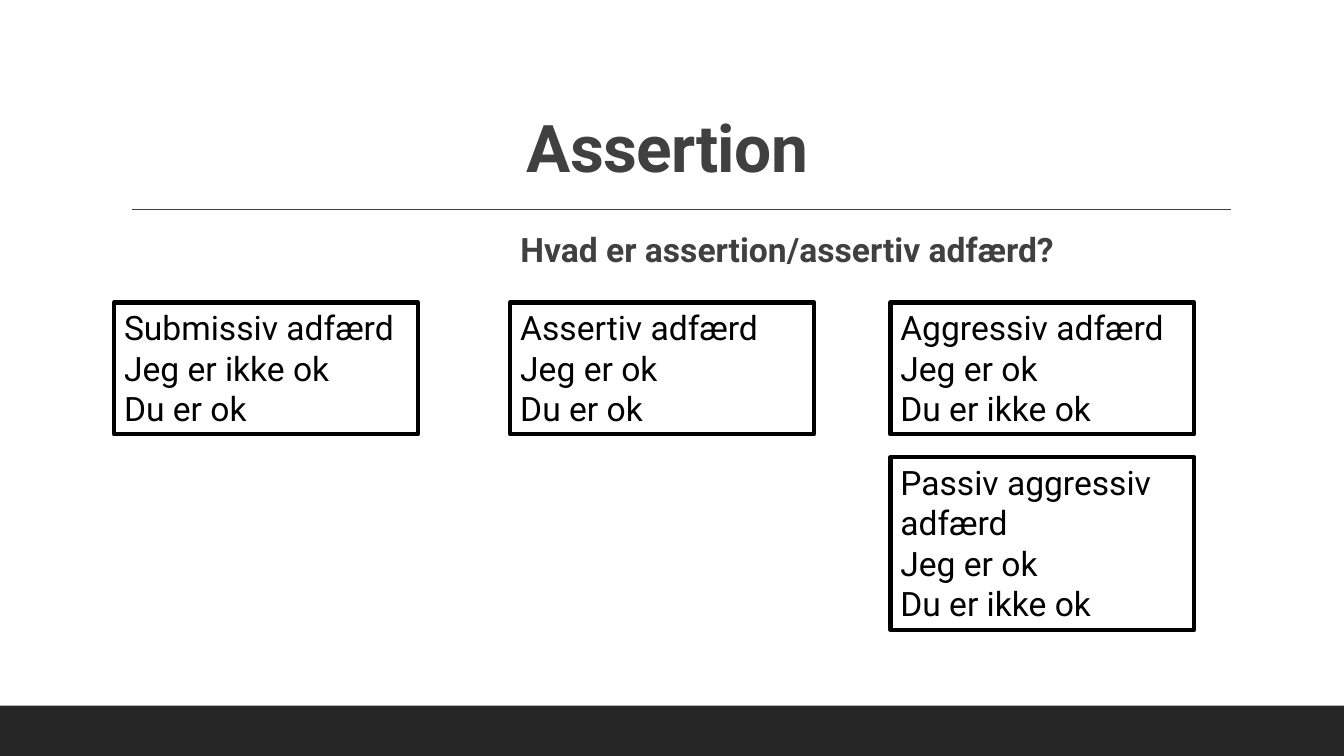
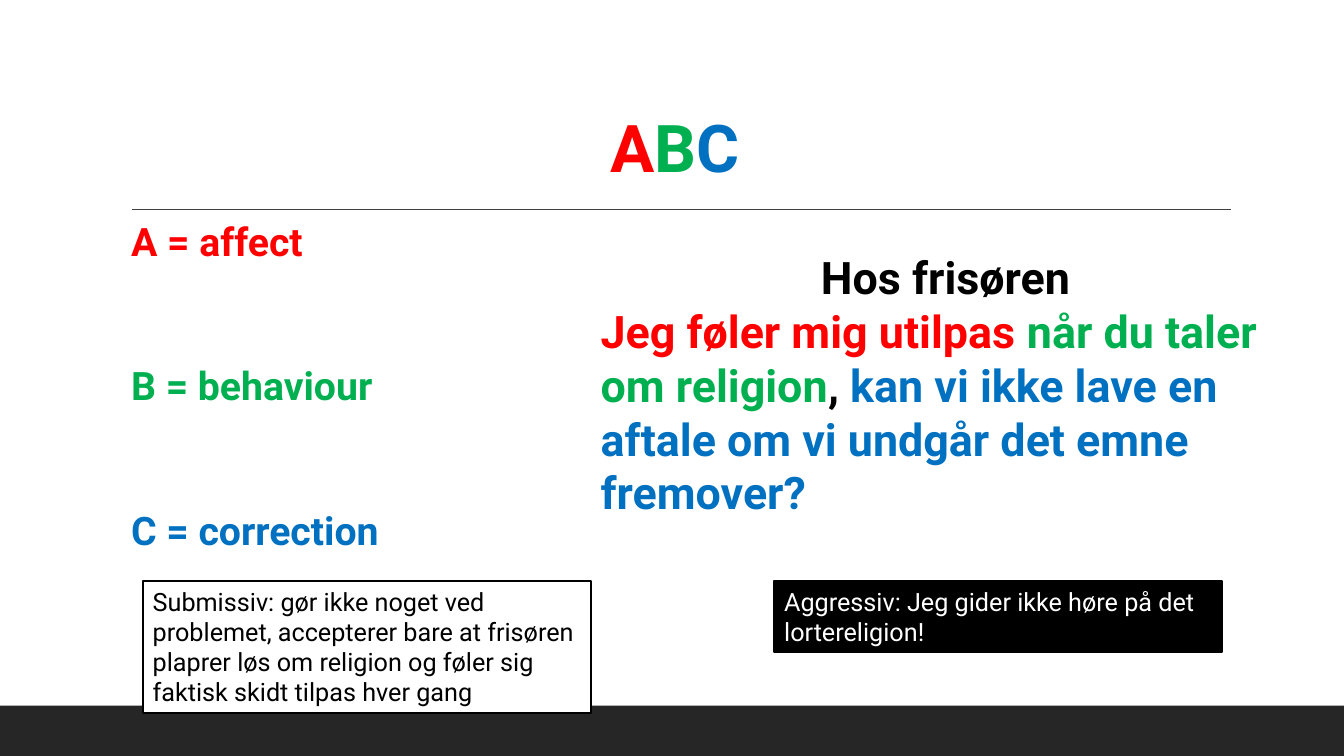
from lxml.etree import SubElement
from pptx import Presentation
from pptx.dml.color import RGBColor as RGB
from pptx.enum.shapes import MSO_CONNECTOR as LINE, MSO_SHAPE as SHAPE
from pptx.enum.text import MSO_ANCHOR as ANCHOR, MSO_AUTO_SIZE as FIT, PP_ALIGN as ALIGN
from pptx.oxml.ns import qn
from pptx.util import Pt

FONT = "Roboto"
BLACK = RGB(0x00, 0x00, 0x00)
WHITE = RGB(0xFF, 0xFF, 0xFF)
DARK = RGB(0x26, 0x26, 0x26)
GRAY = RGB(0x40, 0x40, 0x40)
RED = RGB(0xFF, 0x00, 0x00)
GREEN = RGB(0x00, 0xB0, 0x50)
BLUE = RGB(0x00, 0x70, 0xC0)
WIDTH, HEIGHT = 960, 540


def place(shape, left, top, width, height):
    shape.left, shape.top = Pt(left), Pt(top)
    shape.width, shape.height = Pt(width), Pt(height)


def write(shape, paras, size=24, color=BLACK, bold=False, align=ALIGN.LEFT,
          lead=1.0, gap=0, track=0, anchor=ANCHOR.TOP):
    frame = shape.text_frame
    frame.word_wrap = True
    frame.auto_size = FIT.NONE
    frame.vertical_anchor = anchor
    for i, runs in enumerate(paras):
        para = frame.add_paragraph() if i else frame.paragraphs[0]
        para.alignment = align
        para.line_spacing = lead
        para.space_before = Pt(gap if i else 0)
        para.space_after = Pt(0)
        for words, tint in [(runs, color)] if isinstance(runs, str) else runs:
            run = para.add_run()
            run.text = words
            font = run.font
            font.name, font.size, font.bold = FONT, Pt(size), bold
            font.color.rgb = tint
            if track:
                run._r.get_or_add_rPr().set("spc", str(track))


def rect(slide, area, fill=None, line=None, weight=1):
    shape = slide.shapes.add_shape(SHAPE.RECTANGLE, *map(Pt, area))
    shape.shadow.inherit = False
    if fill is None:
        shape.fill.background()
    else:
        shape.fill.solid()
        shape.fill.fore_color.rgb = fill
    if line is None:
        shape.line.fill.background()
    else:
        shape.line.color.rgb = line
        shape.line.width = Pt(weight)
    return shape


def rule(slide, left, right, top):
    line = slide.shapes.add_connector(LINE.STRAIGHT, Pt(left), Pt(top), Pt(right), Pt(top))
    line.line.color.rgb = GRAY
    line.line.width = Pt(1)
    SubElement(line.element.spPr, qn("a:effectLst"))
    return line


def style(layout, slide):
    title = layout.placeholders[0]
    place(title, 86.4, 22.3, 792, 114.5)
    band = rect(slide, (0, 504, WIDTH, 36), fill=DARK)
    line = rule(slide, 94.5, 879, 149.5)
    for i, part in enumerate((band, line)):
        layout.shapes.element.insert(2 + i, part.element)


def title(slide, runs):
    write(slide.shapes.title, [runs], size=47, color=GRAY, bold=True,
          align=ALIGN.CENTER, lead=0.9, track=-50, anchor=ANCHOR.BOTTOM)


def body(slide, area, paras, size, gap=0):
    shape = slide.placeholders[1]
    place(shape, *area)
    frame = shape.text_frame
    frame.margin_left, frame.margin_right = Pt(7.2), Pt(0)
    write(shape, paras, size=size, color=GRAY, bold=True, lead=1.1, gap=gap)
    for para in frame.paragraphs:
        props = para._p.get_or_add_pPr()
        props.set("marL", "0")
        props.set("indent", "0")
        SubElement(props, qn("a:buNone"))


def types(slide):
    title(slide, "Assertion ")
    body(slide, (364.5, 157, 792, 50), ["Hvad er assertion/assertiv adfærd?"], 24)
    ok, bad = "er ok", "er ikke ok"
    cards = [
        (81.5, 216, 94.3, "Submissiv", bad, ok),
        (364.5, 216, 94.3, "Assertiv", ok, ok),
        (636, 216, 94.3, "Aggressiv", ok, bad),
        (636, 326.5, 123.5, "Passiv aggressiv", ok, bad),
    ]
    for left, top, height, kind, me, you in cards:
        card = rect(slide, (left, top, 217, height), line=BLACK, weight=3)
        write(card, [f"{kind} adfærd", f"Jeg {me}", f"Du {you}"])


def model(slide):
    terms = [("A = affect", RED), ("B = behaviour", GREEN), ("C = correction", BLUE)]
    title(slide, [(term[0], tint) for term, tint in terms])
    body(slide, (86.4, 148.5, 302, 296), [[term] for term in terms], 28, gap=66)
    quote = slide.shapes.add_textbox(Pt(422), Pt(175), Pt(507), Pt(201))
    write(quote, ["Hos frisøren", [
        ("Jeg føler mig utilpas ", RED),
        ("når du taler om religion", GREEN),
        (", ", BLACK),
        ("kan vi ikke lave en aftale om vi undgår det emne fremover?", BLUE),
    ]], size=32, bold=True)
    quote.text_frame.paragraphs[0].alignment = ALIGN.CENTER
    notes = [
        (102, 94.5, WHITE, BLACK, "Submissiv: gør ikke noget ved problemet, accepterer bare "
         "at frisøren plaprer løs om religion og føler sig faktisk skidt tilpas hver gang"),
        (553, 51, BLACK, WHITE, "Aggressiv: Jeg gider ikke høre på det lortereligion!"),
    ]
    for left, height, fill, color, words in notes:
        note = rect(slide, (left, 415, 320, height), fill=fill, line=BLACK, weight=1.25)
        write(note, [words], size=18, color=color)


def main():
    deck = Presentation()
    deck.slide_width, deck.slide_height = Pt(WIDTH), Pt(HEIGHT)
    layout = deck.slide_layouts[1]
    first, second = (deck.slides.add_slide(layout) for _ in range(2))
    style(layout, first)
    types(first)
    model(second)
    deck.save("out.pptx")


if __name__ == "__main__":
    main()
